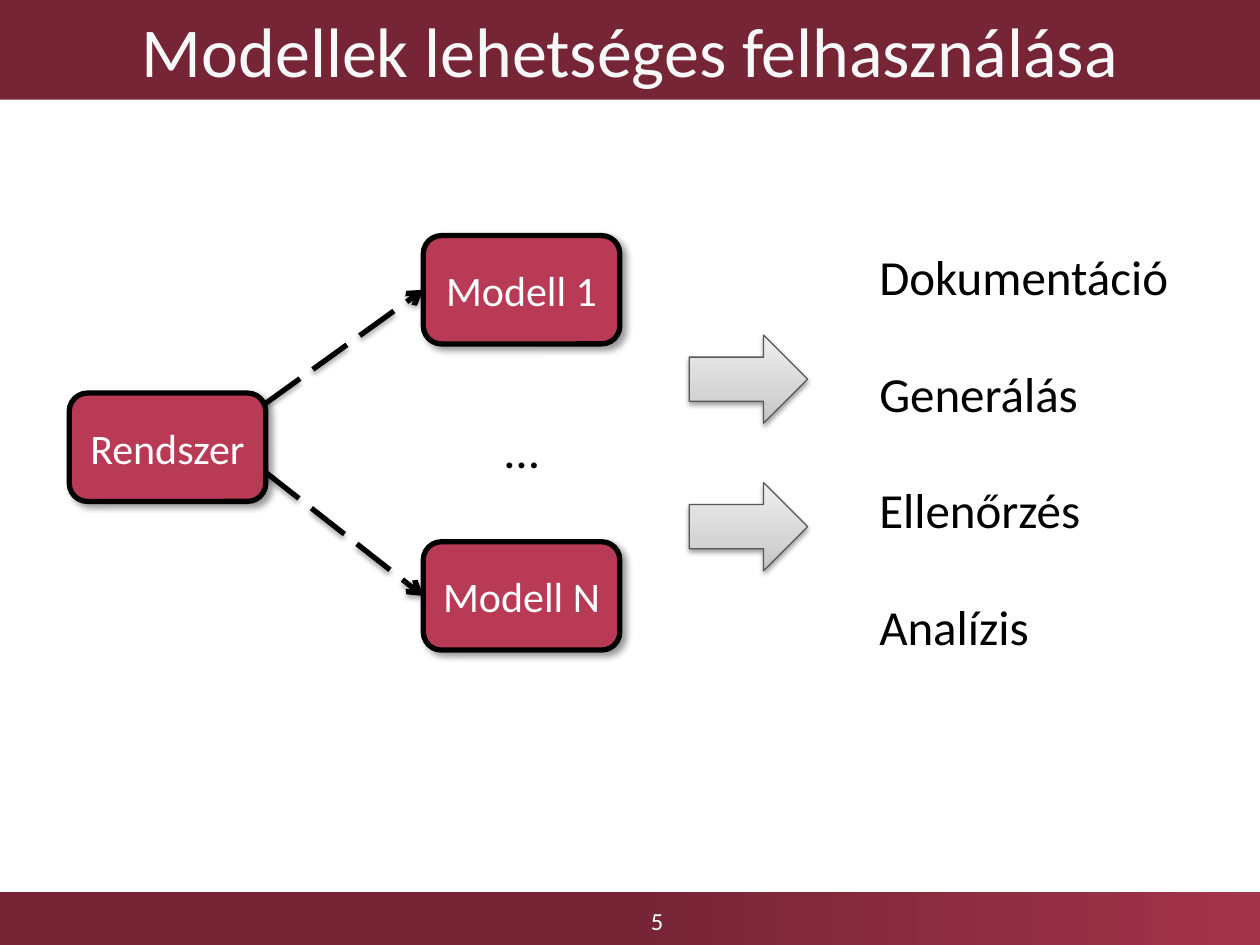
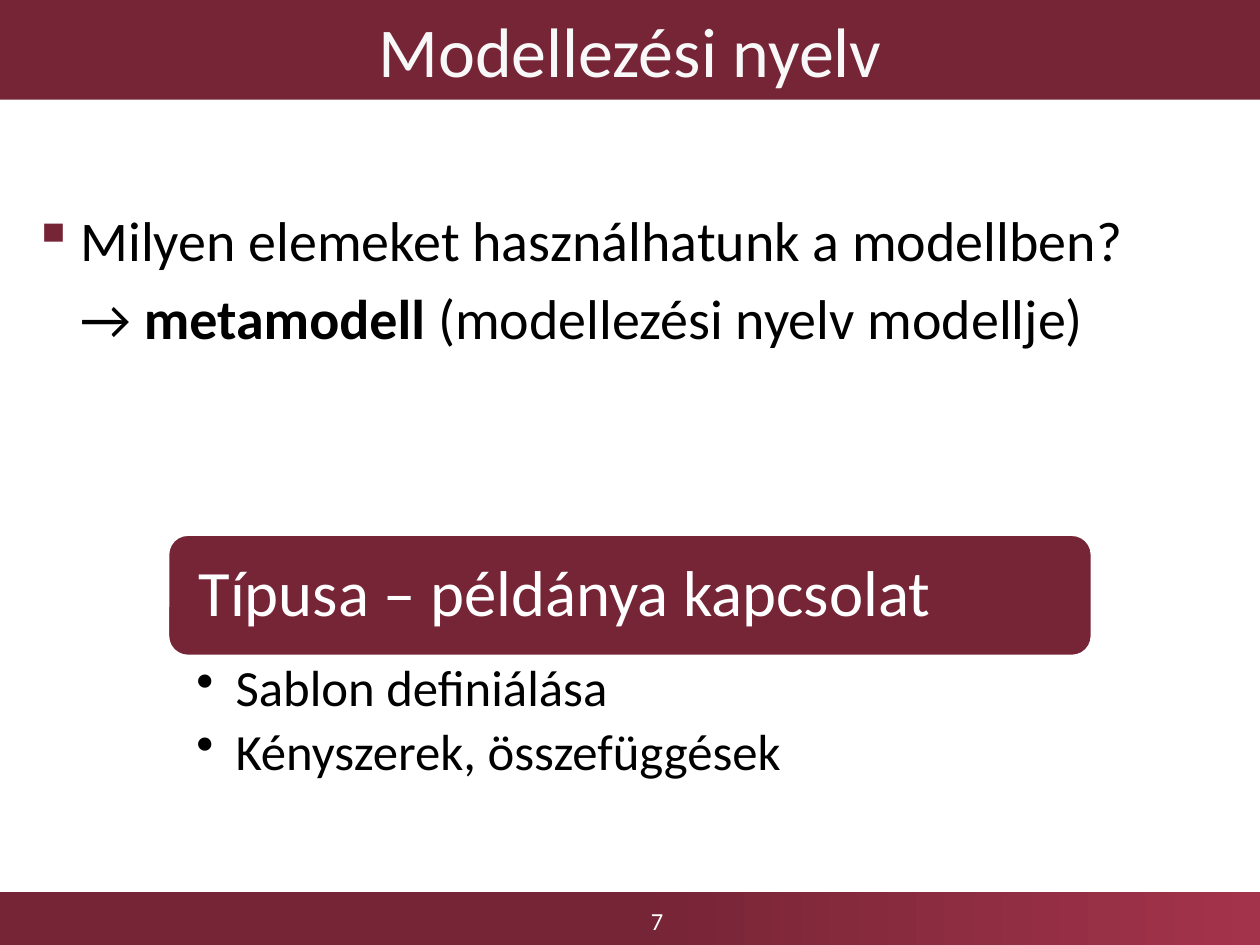
import pptx
import pptx.util
import pptx.dml.color
import pptx.enum.dml
import pptx.enum.shapes
import pptx.enum.text
import pptx.oxml
import pptx.oxml.ns

Inches = pptx.util.Inches
Pt = pptx.util.Pt
RGBColor = pptx.dml.color.RGBColor
Shapes = pptx.enum.shapes.MSO_SHAPE
Align = pptx.enum.text.PP_ALIGN
Anchor = pptx.enum.text.MSO_ANCHOR

FONT = "Calibri"
WINE = RGBColor(0x76, 0x25, 0x36)
ROSE = RGBColor(0xA3, 0x33, 0x4B)
CRIMSON = RGBColor(0xB8, 0x3A, 0x55)
WHITE = RGBColor(0xFF, 0xFF, 0xFF)
OFF_WHITE = RGBColor(0xF8, 0xF8, 0xF8)
BLACK = RGBColor(0, 0, 0)
GRAY = RGBColor(0x58, 0x58, 0x58)
ARROW_STOPS = [
    (0, RGBColor(0xC4, 0xC4, 0xC4)),
    (35, RGBColor(0xD5, 0xD5, 0xD5)),
    (100, RGBColor(0xEF, 0xEF, 0xEF)),
]
FOOTER_STOPS = [(0, WINE), (50, WINE), (100, ROSE)]


def make_element(markup):
    tag_end = min(markup.index(mark) for mark in " />" if mark in markup)
    declaration = " " + pptx.oxml.ns.nsdecls("a")
    return pptx.oxml.parse_xml(markup[:tag_end] + declaration + markup[tag_end:])


def set_gradient(shape, stops, angle):
    marks = "".join(
        f'<a:gs pos="{position * 1000}"><a:srgbClr val="{color}"/></a:gs>'
        for position, color in stops
    )
    gradient = make_element(
        f'<a:gradFill rotWithShape="1"><a:gsLst>{marks}</a:gsLst>'
        f'<a:lin ang="{angle * 60000}" scaled="0"/></a:gradFill>'
    )
    shape.fill.solid()
    solid = shape._element.spPr.find(pptx.oxml.ns.qn("a:solidFill"))
    solid.getparent().replace(solid, gradient)


def set_shadow(shape, opacity, blur, distance, angle):
    properties = shape._element.spPr
    for effects in properties.findall(pptx.oxml.ns.qn("a:effectLst")):
        properties.remove(effects)
    properties.append(make_element(
        f'<a:effectLst><a:outerShdw blurRad="{Pt(blur)}" dist="{Pt(distance)}" '
        f'dir="{angle * 60000}" rotWithShape="0"><a:srgbClr val="{BLACK}">'
        f'<a:alpha val="{opacity * 1000}"/></a:srgbClr></a:outerShdw></a:effectLst>'
    ))


def set_indent(para, margin, hanging=0, bullet=None, color=BLACK):
    properties = para._p.get_or_add_pPr()
    properties.set("marL", str(Inches(margin)))
    properties.set("indent", str(-Inches(hanging)))
    if bullet:
        properties.append(make_element(
            f'<a:buClr><a:srgbClr val="{color}"/></a:buClr>'))
        properties.append(make_element(f'<a:buChar char="{bullet}"/>'))
    else:
        properties.append(make_element("<a:buNone/>"))


def set_font(para, size, color):
    para.font.name = FONT
    para.font.size = Pt(size)
    para.font.color.rgb = color


def add_shape(page, kind, place, fill=None, line=None, width=1):
    shape = page.shapes.add_shape(kind, *map(Inches, place))
    shape.shadow.inherit = False
    if fill is not None:
        shape.fill.solid()
        shape.fill.fore_color.rgb = fill
    if line is None:
        shape.line.fill.background()
    else:
        shape.line.color.rgb = line
        shape.line.width = Pt(width)
    return shape


def write_line(shape, text, size, color, align=Align.CENTER):
    frame = shape.text_frame
    frame.word_wrap = True
    frame.vertical_anchor = Anchor.MIDDLE
    para = frame.paragraphs[0]
    para.text = text
    para.alignment = align
    set_font(para, size, color)
    return para


def add_text_box(page, place):
    box = page.shapes.add_textbox(*map(Inches, place))
    box.text_frame.word_wrap = True
    return box


def add_paragraphs(box, texts):
    frame = box.text_frame
    for index, text in enumerate(texts):
        para = frame.add_paragraph() if index else frame.paragraphs[0]
        para.text = text
    return frame.paragraphs


def add_page(deck, title, number):
    page = deck.slides.add_slide(deck.slide_layouts[6])
    footer = add_shape(page, Shapes.RECTANGLE, (0, 7.08, 10, 0.42))
    set_gradient(footer, FOOTER_STOPS, 0)
    write_line(add_text_box(page, (3.59, 7.11, 3.25, 0.39)), str(number), 14, WHITE)
    band = add_shape(page, Shapes.RECTANGLE, (0, 0, 10, 0.79), WINE)
    write_line(band, title, 40, OFF_WHITE)
    return page


def add_node(page, text, left, top):
    place = (left, top, 1.56, 0.86)
    node = add_shape(page, Shapes.ROUNDED_RECTANGLE, place, CRIMSON, BLACK, 3)
    set_shadow(node, 40, 4, 3, 45)
    write_line(node, text, 24, WHITE)


def add_dashed_arrow(page, start, end):
    arrow = page.shapes.add_connector(
        pptx.enum.shapes.MSO_CONNECTOR.STRAIGHT, *map(Inches, start + end))
    arrow.line.color.rgb = BLACK
    arrow.line.width = Pt(3)
    arrow.line.dash_style = pptx.enum.dml.MSO_LINE.LONG_DASH
    arrow.line._get_or_add_ln().append(make_element('<a:tailEnd type="arrow"/>'))
    set_shadow(arrow, 35, 3.1, 1.8, 90)


def add_block_arrow(page, top):
    arrow = add_shape(page, Shapes.RIGHT_ARROW, (5.47, top, 0.94, 0.7),
                      line=GRAY, width=0.75)
    set_gradient(arrow, ARROW_STOPS, 270)
    set_shadow(arrow, 38, 3.1, 1.6, 90)


def build_usage_page(deck):
    page = add_page(deck, "Modellek lehetséges felhasználása", 5)
    add_node(page, "Rendszer", 0.55, 3.12)
    add_node(page, "Modell 1", 3.36, 1.87)
    add_node(page, "Modell N", 3.36, 4.3)
    dots = add_paragraphs(add_text_box(page, (3.91, 3.28, 0.63, 0.57)), ["…"])
    set_font(dots[0], 28, BLACK)
    add_dashed_arrow(page, (2.11, 3.2), (3.36, 2.3))
    add_dashed_arrow(page, (2.11, 3.75), (3.36, 4.73))
    for top in (2.66, 3.83):
        add_block_arrow(page, top)
    uses = add_paragraphs(add_text_box(page, (6.88, 1.91, 2.81, 3.4)),
                          ["Dokumentáció", "Generálás", "Ellenőrzés", "Analízis"])
    for index, para in enumerate(uses):
        if index:
            para.space_before = Pt(33)
        set_font(para, 28, BLACK)


def build_language_page(deck):
    page = add_page(deck, "Modellezési nyelv", 7)
    body = add_text_box(page, (0.16, 1.58, 9.69, 5.41))
    question, answer = add_paragraphs(
        body, ["Milyen elemeket használhatunk a modellben?", ""])
    set_indent(question, 0.38, 0.38, "▪", WINE)
    set_indent(answer, 0.38)
    answer.space_before = Pt(6.5)
    for text, bold in (("→ ", False), ("metamodell ", True),
                       ("(modellezési nyelv modellje)", False)):
        span = answer.add_run()
        span.text = text
        span.font.bold = bold
    for para in (question, answer):
        set_font(para, 32, BLACK)

    heading = add_shape(page, Shapes.ROUNDED_RECTANGLE, (1.33, 4.24, 7.34, 0.97),
                        WINE, WHITE, 2)
    heading.text_frame.margin_left = Inches(0.2)
    para = write_line(heading, "Típusa – példánya kapcsolat", 37, WHITE, Align.LEFT)
    para.line_spacing = 0.9

    details = add_text_box(page, (1.33, 5.21, 7.34, 1.09))
    details.text_frame.margin_left = Inches(0.23)
    details.text_frame.margin_right = Inches(0.29)
    for para in add_paragraphs(details, ["Sablon definiálása", "Kényszerek, összefüggések"]):
        para.line_spacing = 0.9
        para.space_after = Pt(5)
        set_indent(para, 0.31, 0.31, "•")
        set_font(para, 29, BLACK)


def main():
    deck = pptx.Presentation()
    deck.slide_width = Inches(10)
    deck.slide_height = Inches(7.5)
    build_usage_page(deck)
    build_language_page(deck)
    deck.save("out.pptx")


if __name__ == "__main__":
    main()
